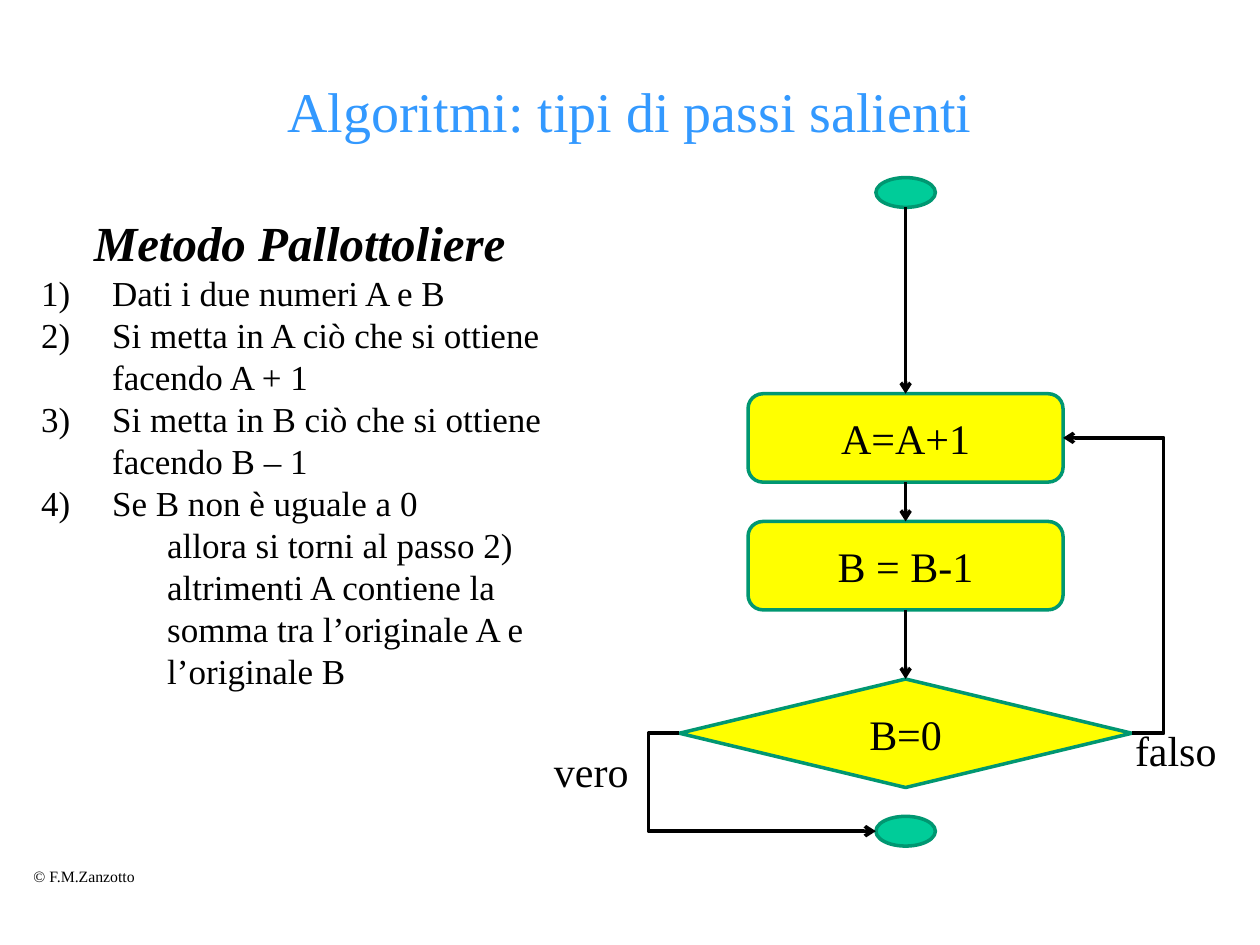
from lxml import etree
from pptx import Presentation
from pptx.dml.color import RGBColor
from pptx.enum.shapes import MSO_CONNECTOR, MSO_SHAPE
from pptx.enum.text import MSO_ANCHOR, MSO_AUTO_SIZE, PP_ALIGN
from pptx.oxml.ns import qn
from pptx.util import Pt

STRAIGHT, ELBOW = MSO_CONNECTOR.STRAIGHT, MSO_CONNECTOR.ELBOW
ROUNDED, DIAMOND, OVAL = MSO_SHAPE.ROUNDED_RECTANGLE, MSO_SHAPE.DIAMOND, MSO_SHAPE.OVAL
CENTER, LEFT, MIDDLE = PP_ALIGN.CENTER, PP_ALIGN.LEFT, MSO_ANCHOR.MIDDLE
FIT_SHAPE = MSO_AUTO_SIZE.SHAPE_TO_FIT_TEXT

FONT = "Times New Roman"
COLORS = {"title": "3399FF", "text": "000000", "step": "FFFF00",
          "terminal": "00CC99", "outline": "009771", "arrow": "000000"}
TITLE = "Algoritmi: tipi di passi salienti"
METHOD = "Metodo Pallottoliere"
STEPS = ["Dati i due numeri A e B",
         "Si metta in A ciò che si ottiene facendo A + 1",
         "Si metta in B ciò che si ottiene facendo B – 1",
         "Se B non è uguale a 0"]
BRANCHES = ["\tallora si torni al passo 2)",
            "\taltrimenti A contiene la somma tra l’originale A e l’originale B"]


def color(name):
    """Return the named colour."""
    return RGBColor.from_string(COLORS[name])


def format_paragraph(paragraph, size, color_name="text", align=LEFT):
    """Set the alignment and font of a paragraph."""
    paragraph.alignment = align
    paragraph.font.name = FONT
    paragraph.font.size = Pt(size)
    paragraph.font.color.rgb = color(color_name)


def indent(paragraph, margin, hanging, numbered=False):
    """Give a paragraph a hanging indent and, if asked, a number."""
    properties = paragraph._p.get_or_add_pPr()
    properties.set("marL", str(Pt(margin)))
    properties.set("indent", str(Pt(-hanging)))
    if numbered:
        etree.SubElement(properties, qn("a:buAutoNum"), type="arabicParenR")
    else:
        etree.SubElement(properties, qn("a:buNone"))


def add_title(slide, left, top, width, height):
    """Place and format the title placeholder."""
    title = slide.shapes.title
    title.left, title.top, title.width, title.height = map(Pt, (left, top, width, height))
    title.text_frame.text = TITLE
    title.text_frame.vertical_anchor = MIDDLE
    format_paragraph(title.text_frame.paragraphs[0], 32, "title", CENTER)


def add_method(slide, left, top, width, height):
    """Write the method's heading, numbered steps and branches."""
    frame = slide.shapes.add_textbox(*map(Pt, (left, top, width, height))).text_frame
    frame.word_wrap = True
    heading = frame.paragraphs[0]
    heading.text = METHOD
    indent(heading, 27, 27)
    format_paragraph(heading, 28, align=CENTER)
    heading.font.bold = heading.font.italic = True
    for text in STEPS + BRANCHES:
        paragraph = frame.add_paragraph()
        paragraph.text = text
        if text in STEPS:
            indent(paragraph, 40.5, 40.5, numbered=True)
        else:
            paragraph.level = 1
            indent(paragraph, 72, 40.5)
        format_paragraph(paragraph, 20)


def add_label(slide, text, size, left, top, width, height):
    """Add a one-line label that does not wrap."""
    frame = slide.shapes.add_textbox(*map(Pt, (left, top, width, height))).text_frame
    frame.word_wrap = False
    frame.auto_size = FIT_SHAPE
    frame.text = text
    format_paragraph(frame.paragraphs[0], size)


def add_node(slide, kind, fill, center, top, width, height, text=""):
    """Add a flowchart node centred on a vertical axis."""
    node = slide.shapes.add_shape(kind, *map(Pt, (center - width / 2, top, width, height)))
    node.shadow.inherit = False
    node.fill.solid()
    node.fill.fore_color.rgb = color(fill)
    node.line.color.rgb = color("outline")
    node.line.width = Pt(2)
    if text:
        node.text_frame.text = text
        node.text_frame.vertical_anchor = MIDDLE
        format_paragraph(node.text_frame.paragraphs[0], 24, align=CENTER)


def add_arrow(slide, start, end, bend=None):
    """Draw an arrow, bent at the given x position if there is one."""
    kind = STRAIGHT if bend is None else ELBOW
    arrow = slide.shapes.add_connector(kind, *map(Pt, start + end))
    arrow.line.color.rgb = color("arrow")
    arrow.line.width = Pt(2)
    etree.SubElement(arrow.line._get_or_add_ln(), qn("a:tailEnd"), type="arrow")
    properties = arrow._element.spPr
    etree.SubElement(properties, qn("a:effectLst"))
    if bend is not None:
        share = round((bend - start[0]) / (end[0] - start[0]) * 100000)
        guides = properties.find(qn("a:prstGeom")).get_or_add_avLst()
        etree.SubElement(guides, qn("a:gd"), name="adj1", fmla=f"val {share}")


def add_flowchart(slide, left, top, width, height):
    """Draw the loop of steps, its test and both exits."""
    center = left + 147
    bottom = top + height
    oval_width, oval_height = 34, 17
    step_width, step_height = 180, 50.5
    test_width, test_height = 258.5, 62
    step_tops = [top + 123.5, top + 196.5]
    test_top = top + 286.5
    test_middle = test_top + test_height / 2
    end_top = bottom - oval_height

    add_node(slide, OVAL, "terminal", center, top, oval_width, oval_height)
    for text, step_top in zip(("A=A+1", "B = B-1"), step_tops):
        add_node(slide, ROUNDED, "step", center, step_top, step_width, step_height, text)
    add_node(slide, DIAMOND, "step", center, test_top, test_width, test_height, "B=0")
    add_node(slide, OVAL, "terminal", center, end_top, oval_width, oval_height)

    departures = [top + oval_height] + [step_top + step_height for step_top in step_tops]
    for departure, arrival in zip(departures, step_tops + [test_top]):
        add_arrow(slide, (center, departure), (center, arrival))
    add_arrow(slide, (center + test_width / 2, test_middle),
              (center + step_width / 2, step_tops[0] + step_height / 2), left + width)
    add_arrow(slide, (center - test_width / 2, test_middle),
              (center - oval_width / 2, end_top + oval_height / 2), left)
    add_label(slide, "falso", 24, left + 271, top + 309, 62, 36)
    add_label(slide, "vero", 24, left - 61, top + 321, 57.5, 36)


def main():
    """Build and save the slide."""
    presentation = Presentation()
    presentation.slide_width, presentation.slide_height = Pt(720), Pt(540)
    slide = presentation.slides.add_slide(presentation.slide_layouts[5])
    add_label(slide, "© F.M.Zanzotto", 9, 12, 492, 73.5, 18)
    add_title(slide, 54, 36, 612, 54)
    add_method(slide, 16.5, 118, 309.5, 372)
    add_flowchart(slide, 370.5, 101.5, 294.5, 382)
    presentation.save("out.pptx")


if __name__ == "__main__":
    main()
